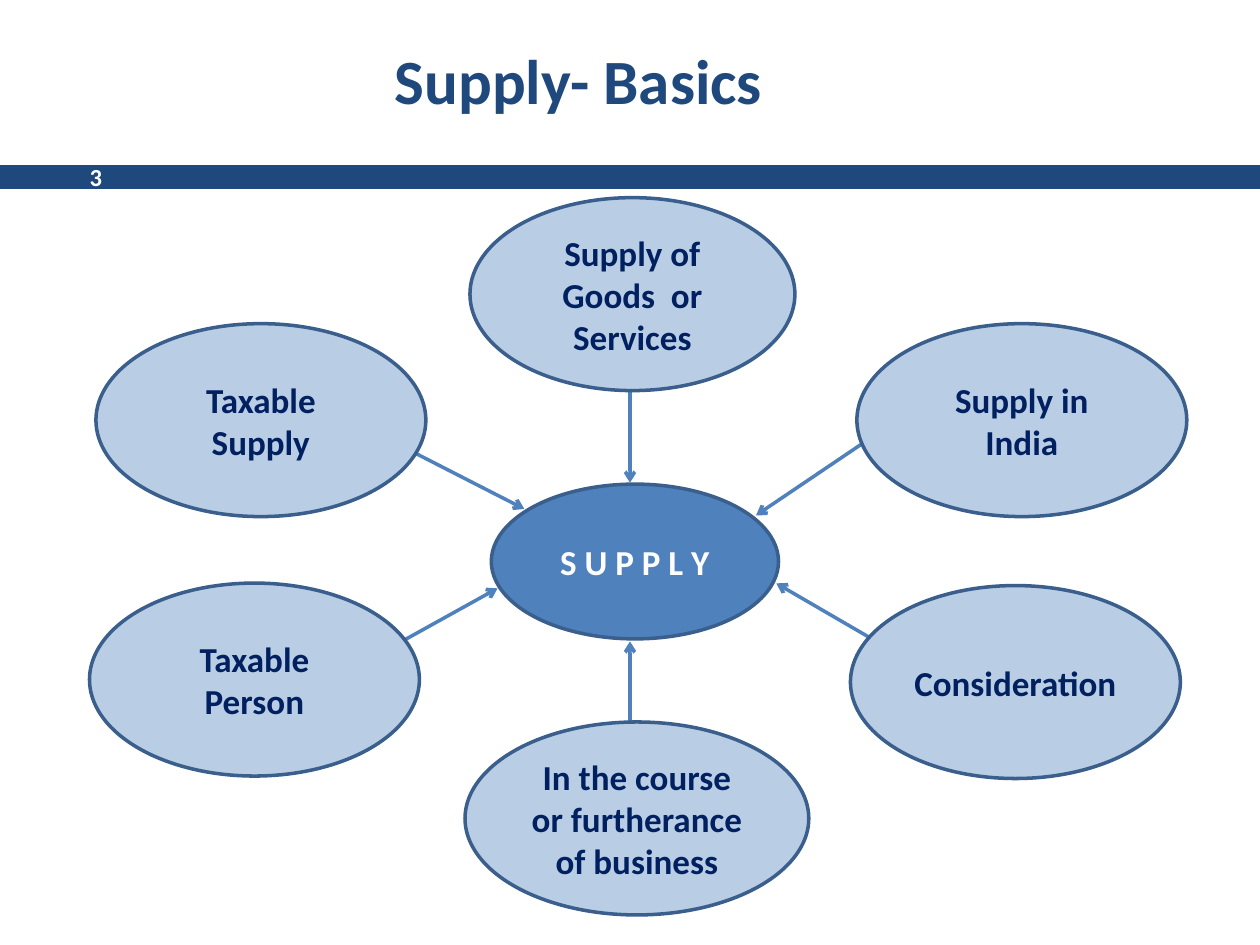
from lxml.etree import SubElement as Sub
from pptx import Presentation
from pptx.dml.color import RGBColor
from pptx.enum.shapes import MSO_CONNECTOR as Link, MSO_SHAPE as Kind
from pptx.enum.text import MSO_ANCHOR as Anchor, PP_ALIGN as Align
from pptx.oxml.ns import qn
from pptx.util import Cm, Pt

TITLE = "Supply- Basics"
NUMBER = "3"
HUB = ("S U P P L Y", 12.8, 11.32, 5.79, 3.12)
TALL = 3.89
NODES = [
    ("Supply of Goods  or Services", 12.75, 5.93, 6.55, (12.7, 7.87, 12.7, 9.73)),
    ("In the course or furtherance of business", 12.84, 16.5, 6.93, (12.7, 14.53, 12.7, 12.93)),
    ("Taxable Supply", 5.26, 8.47, 6.65, (7.95, 8.92, 10.57, 10.26)),
    ("Supply in India", 20.6, 8.47, 6.65, (17.58, 8.81, 15.24, 10.39)),
    ("Taxable Person", 5.13, 13.7, 6.65, (8.1, 12.93, 10.03, 11.86)),
    ("Consideration", 20.47, 13.75, 6.65, (17.58, 12.88, 15.65, 11.76)),
]
NAVY, BLUE, PALE, EDGE, INK, WHITE = "1F497D", "4F81BD", "B9CDE5", "3A5F8C", "002060", "FFFFFF"


def paint(part, color):
    part.solid()
    part.fore_color.rgb = RGBColor.from_string(color)


def write(shape, text, size, color, align=Align.CENTER):
    frame = shape.text_frame
    frame.text = text
    frame.word_wrap = True
    frame.vertical_anchor = Anchor.MIDDLE
    para = frame.paragraphs[0]
    para.alignment = align
    font = para.font
    font.name, font.size, font.bold = "Calibri", Pt(size), True
    paint(font.fill, color)
    return para


def oval(slide, text, x, y, wide, tall, fill, ink):
    shape = slide.shapes.add_shape(
        Kind.OVAL, Cm(x - wide / 2), Cm(y - tall / 2), Cm(wide), Cm(tall))
    shape.shadow.inherit = False
    paint(shape.fill, fill)
    paint(shape.line.fill, EDGE)
    shape.line.width = Pt(2)
    write(shape, text, 20, ink)


def arrow(slide, ends):
    line = slide.shapes.add_connector(Link.STRAIGHT, *map(Cm, ends))
    paint(line.line.fill, BLUE)
    line.line.width = Pt(2)
    Sub(line.line._get_or_add_ln(), qn("a:tailEnd"), type="arrow")
    Sub(line._element.spPr, qn("a:effectLst"))


def main():
    deck = Presentation()
    deck.slide_width, deck.slide_height = Cm(25.4), Cm(19.05)
    slide = deck.slides.add_slide(deck.slide_layouts[5])

    title = slide.shapes.title
    title.left, title.top, title.width, title.height = map(Cm, (1.3, 0.53, 20.73, 2.59))
    paint(title.fill, WHITE)
    write(title, TITLE, 36, NAVY).line_spacing = Pt(30)

    bar = slide.shapes.add_shape(Kind.RECTANGLE, 0, Cm(3.33), deck.slide_width, Cm(0.48))
    bar.shadow.inherit = False
    paint(bar.fill, NAVY)
    bar.line.fill.background()

    box = slide.shapes.add_textbox(Cm(0.3), Cm(3.33), Cm(2.01), Cm(0.48))
    frame = box.text_frame
    frame.margin_top = frame.margin_bottom = 0
    write(box, NUMBER, 14, WHITE, Align.RIGHT)

    oval(slide, *HUB, BLUE, WHITE)
    for *_, ends in NODES:
        arrow(slide, ends)
    for text, x, y, wide, _ in NODES:
        oval(slide, text, x, y, wide, TALL, PALE, INK)

    deck.save("out.pptx")


if __name__ == "__main__":
    main()
